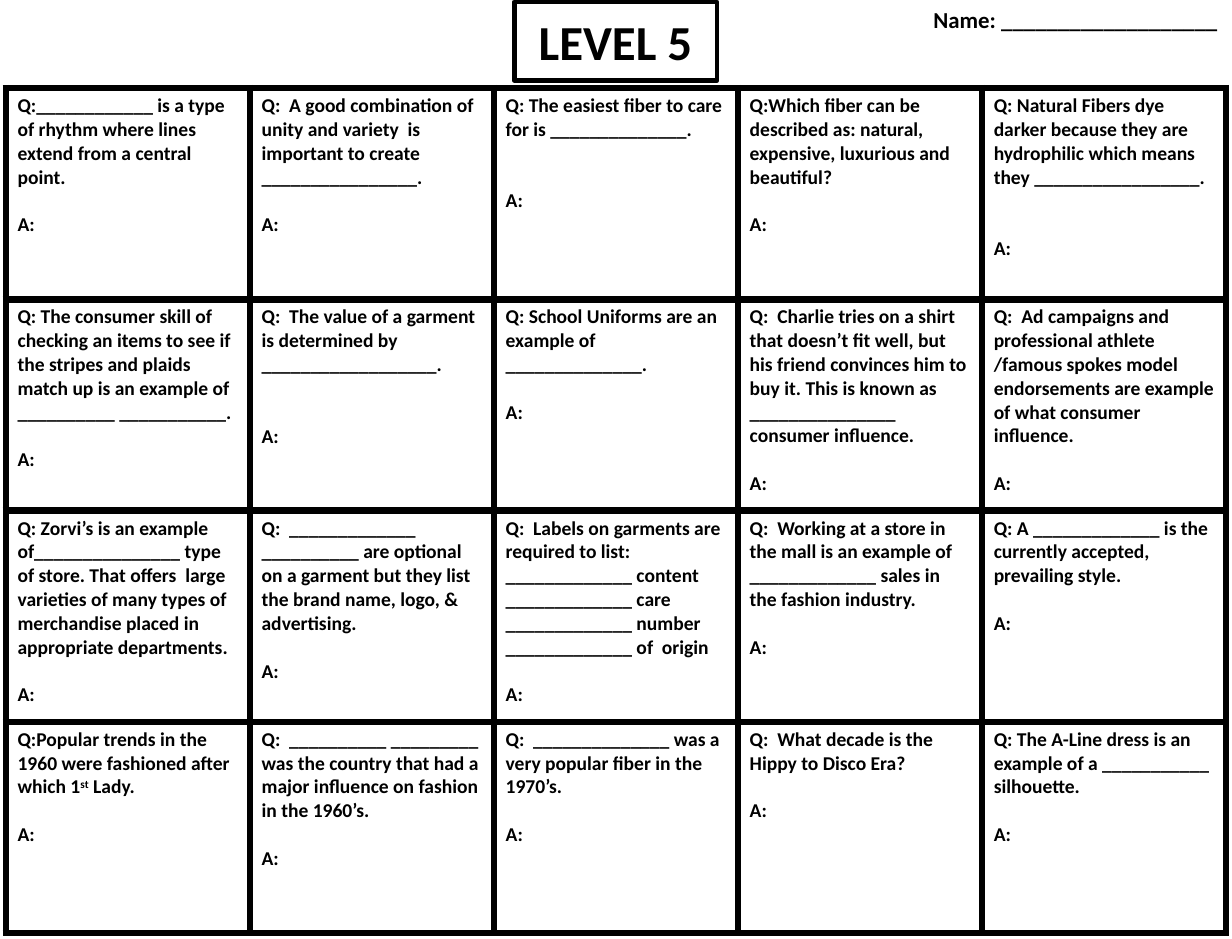
from pptx import Presentation
from pptx.dml.color import RGBColor
from pptx.enum import text
from pptx.oxml import parse_xml
from pptx.oxml.ns import nsdecls
from pptx.util import Pt

TITLE = "LEVEL 5"
NAME_LINE = "Name: ___________________"
ANSWER = "A:"
# Each cell: question, number of lines left free above the answer.
# Text between carets is raised.
QUESTIONS = [
    [
        ("Q:____________ is a type of rhythm where lines extend from a central point.", 1),
        ("Q:  A good combination of unity and variety  is important to create ________________.", 1),
        ("Q: The easiest fiber to care for is ______________.", 2),
        ("Q:Which fiber can be described as: natural, expensive, luxurious and beautiful?", 1),
        ("Q: Natural Fibers dye darker because they are  hydrophilic which means they _________________.", 2),
    ],
    [
        ("Q: The consumer skill of checking an items to see if the stripes and plaids match up "
         "is an example of __________ ___________.", 1),
        ("Q:  The value of a garment is determined by __________________.", 2),
        ("Q: School Uniforms are an example of  ______________.", 1),
        ("Q:  Charlie tries on a shirt that doesn’t fit well, but his friend convinces him to buy it. "
         "This is known as _______________ consumer influence.", 1),
        ("Q:  Ad campaigns and professional athlete  /famous spokes model endorsements are example "
         "of what consumer influence.", 1),
    ],
    [
        ("Q: Zorvi’s is an example of_______________ type of store. That offers  large varieties "
         "of many types of merchandise placed in appropriate departments.", 1),
        ("Q:  _____________ __________ are optional on a garment but they list the brand name, "
         "logo, & advertising.", 1),
        ("Q:  Labels on garments are required to list:\n_____________ content\n_____________ care\n"
         "_____________ number\n_____________ of  origin", 1),
        ("Q:  Working at a store in the mall is an example of _____________ sales in the fashion industry.", 1),
        ("Q: A _____________ is the currently accepted, prevailing style.", 1),
    ],
    [
        ("Q:Popular trends in the 1960 were fashioned after which 1^st^ Lady.", 1),
        ("Q:  __________ _________ was the country that had a major influence on fashion in the 1960’s.", 1),
        ("Q:  ______________ was a very popular fiber in the 1970’s.", 1),
        ("Q:  What decade is the Hippy to Disco Era?", 1),
        ("Q: The A-Line dress is an example of a ___________ silhouette.", 1),
    ],
]

BLACK = "000000"
TEXT_SIZE = 12
LINE_HEIGHT = 14.65
BORDER = 4.5
INSETS = {"margin_left": Pt(7.2), "margin_right": Pt(7.2),
          "margin_top": Pt(3.6), "margin_bottom": Pt(3.6)}


def color(value):
    return RGBColor.from_string(value)


def set_all(target, values):
    for name, value in values.items():
        setattr(target, name, value)


def write(paragraph, content, size):
    """Fill a paragraph with bold runs, raising the parts between carets."""
    for index, part in enumerate(content.split("^")):
        run = paragraph.add_run()
        run.text = part
        set_all(run.font, {"name": "Calibri", "size": Pt(size), "bold": True})
        run.font.color.rgb = color(BLACK)
        if index % 2:
            run.font._element.set("baseline", "30000")


def write_heading(shape, content, size, anchor, space_before):
    frame = shape.text_frame
    set_all(frame, {**INSETS, "word_wrap": True, "vertical_anchor": anchor,
                    "auto_size": text.MSO_AUTO_SIZE.NONE})
    paragraph = frame.paragraphs[0]
    set_all(paragraph, {"alignment": text.PP_ALIGN.CENTER, "space_before": Pt(space_before)})
    write(paragraph, content, size)


def add_borders(cell):
    properties = cell._tc.get_or_add_tcPr()
    for index, side in enumerate("LRTB"):
        properties.insert(index, parse_xml(
            f'<a:ln{side} {nsdecls("a")} w="{Pt(BORDER)}"><a:solidFill>'
            f'<a:srgbClr val="{BLACK}"/></a:solidFill></a:ln{side}>'))


def fill_cell(cell, question, free_lines):
    set_all(cell, INSETS)
    cell.fill.background()
    add_borders(cell)
    frame = cell.text_frame
    for index, line in enumerate(question.split("\n")):
        paragraph = frame.add_paragraph() if index else frame.paragraphs[0]
        write(paragraph, line, TEXT_SIZE)
    answer = frame.add_paragraph()
    answer.space_before = Pt(free_lines * LINE_HEIGHT)
    write(answer, ANSWER, TEXT_SIZE)


def main():
    presentation = Presentation()
    set_all(presentation, {"slide_width": Pt(756), "slide_height": Pt(576)})
    slide = presentation.slides.add_slide(presentation.slide_layouts[5])

    title = slide.shapes.title
    set_all(title, {"left": Pt(315.5), "top": Pt(1.25), "width": Pt(124.5), "height": Pt(48)})
    title.line.color.rgb = color(BLACK)
    title.line.width = Pt(3)
    write_heading(title, TITLE, 30, text.MSO_ANCHOR.MIDDLE, 0)

    name_box = slide.shapes.add_textbox(Pt(564), Pt(0), Pt(192), Pt(27))
    write_heading(name_box, NAME_LINE, 14, text.MSO_ANCHOR.TOP, 1)

    table = slide.shapes.add_table(len(QUESTIONS), len(QUESTIONS[0]),
                                   Pt(3.6), Pt(54), Pt(748.8), Pt(518.4)).table
    set_all(table, {"first_row": False, "horz_banding": False})
    for row, questions in enumerate(QUESTIONS):
        for column, (question, free_lines) in enumerate(questions):
            fill_cell(table.cell(row, column), question, free_lines)

    presentation.save("out.pptx")


if __name__ == "__main__":
    main()
